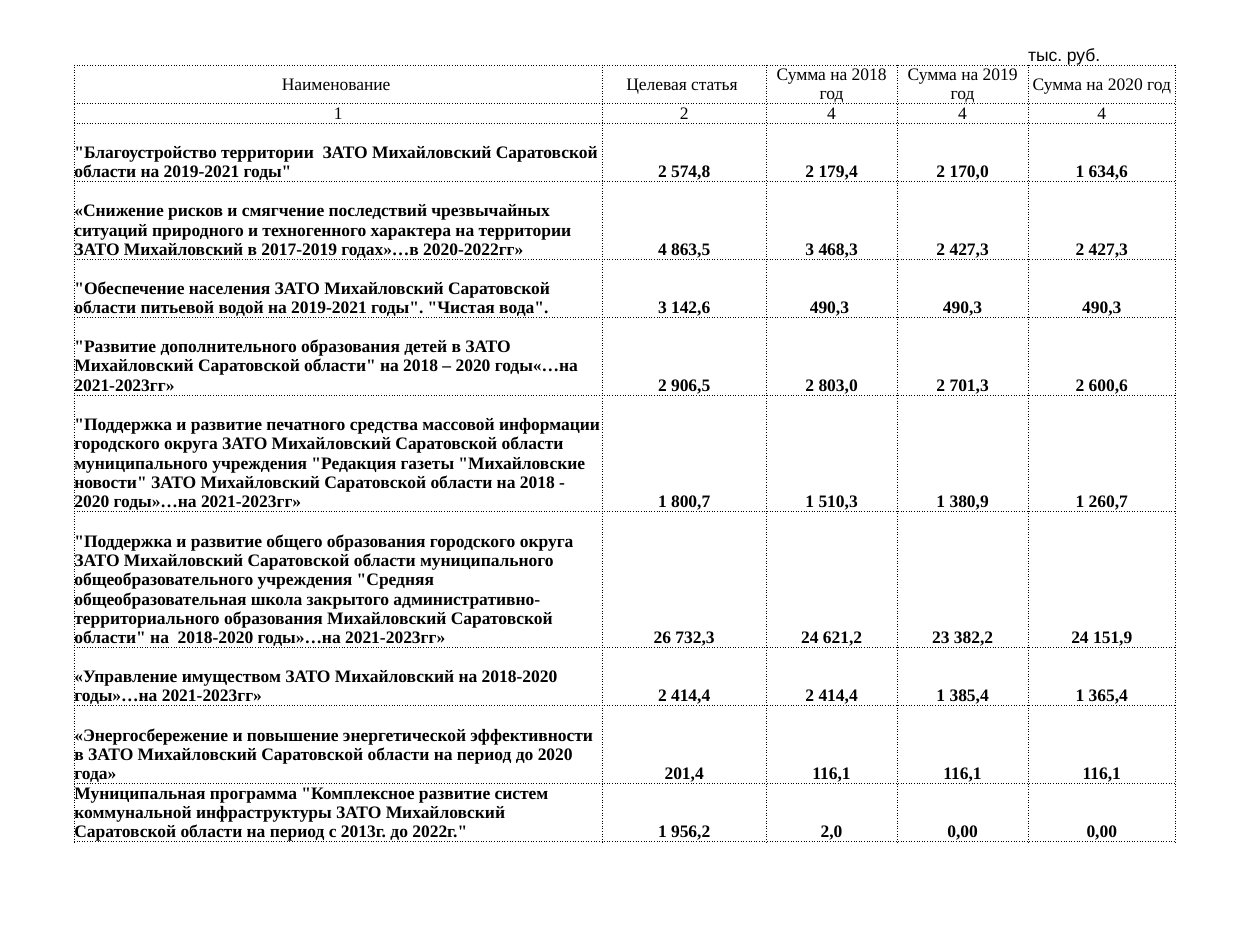
from typing import NamedTuple

from lxml.etree import SubElement
from pptx import Presentation
from pptx.dml.color import RGBColor
from pptx.enum.text import MSO_ANCHOR as Anchor, PP_ALIGN as Align
from pptx.oxml.ns import qn
from pptx.util import Inches, Pt

BLACK = RGBColor(0, 0, 0)
TEXT_SIZE = Pt(10)
LINE_HEIGHT = Pt(11.1)
BORDER = Pt(0.5)
COLUMN_WIDTHS = (4.19, 1.3, 1.04, 1.04, 1.17)
LEFT, TOP = 0.59, 0.36


class Row(NamedTuple):
    lines: int
    texts: tuple[str, ...]


class Look(NamedTuple):
    font: str = "Times New Roman"
    bold: bool = False
    align: Align = Align.CENTER
    anchor: Anchor = Anchor.BOTTOM
    sides: str = "LRTB"


UNIT = Look(font="Arial", align=Align.LEFT, sides="B")
HEADING = Look(anchor=Anchor.MIDDLE)
PROGRAMME = Look(bold=True, align=Align.LEFT)
AMOUNT = Look(bold=True)

UNIT_ROW = Row(1, ("", "", "", "", "тыс. руб."))
HEADING_ROWS = [
    Row(2, ("Наименование ", "Целевая статья ", "Сумма на 2018 год",
            "Сумма на 2019 год", "Сумма на 2020 год")),
    Row(1, ("1", "2", "4", "4", "4")),
]
PROGRAMME_ROWS = [
    Row(3, ('"Благоустройство территории  ЗАТО Михайловский Саратовской '
            'области на 2019-2021 годы"',
            "2 574,8", "2 179,4", "2 170,0", "1 634,6")),
    Row(4, ("«Снижение рисков и смягчение последствий чрезвычайных ситуаций "
            "природного и техногенного характера на территории ЗАТО "
            "Михайловский в 2017-2019 годах»…в 2020-2022гг»",
            "4 863,5", "3 468,3", "2 427,3", "2 427,3")),
    Row(3, ('"Обеспечение населения ЗАТО Михайловский Саратовской области '
            'питьевой водой на 2019-2021 годы". "Чистая вода".',
            "3 142,6", "490,3 ", "490,3", "490,3")),
    Row(4, ('"Развитие дополнительного образования детей в ЗАТО Михайловский '
            'Саратовской области" на 2018 – 2020 годы«…на 2021-2023гг»',
            "2 906,5", "2 803,0", "2 701,3", "2 600,6")),
    Row(6, ('"Поддержка и развитие печатного средства массовой информации '
            'городского округа ЗАТО Михайловский Саратовской области '
            'муниципального учреждения "Редакция газеты "Михайловские '
            'новости" ЗАТО Михайловский Саратовской области на 2018 - 2020 '
            'годы»…на 2021-2023гг»',
            "1 800,7", "1 510,3", "1 380,9", "1 260,7")),
    Row(7, ('"Поддержка и развитие общего образования городского округа ЗАТО '
            'Михайловский Саратовской области муниципального '
            'общеобразовательного учреждения "Средняя общеобразовательная '
            'школа закрытого административно-территориального образования '
            'Михайловский Саратовской области" на  2018-2020 годы»…на '
            '2021-2023гг»',
            "26 732,3", "24 621,2", "23 382,2", "24 151,9")),
    Row(3, ("«Управление имуществом ЗАТО Михайловский на 2018-2020 годы»…на "
            "2021-2023гг»",
            "2 414,4", "2 414,4", "1 385,4", "1 365,4")),
    Row(4, ("«Энергосбережение и повышение энергетической эффективности в "
            "ЗАТО Михайловский Саратовской области на период до 2020 года»",
            "201,4", "116,1", "116,1", "116,1")),
    Row(3, ('Муниципальная программа "Комплексное развитие систем '
            'коммунальной инфраструктуры ЗАТО Михайловский Саратовской '
            'области на период с 2013г. до 2022г."',
            "1 956,2", "2,0", "0,00", "0,00")),
]


def draw_borders(cell, sides: str) -> None:
    """Dot the given sides of the cell and leave the others open."""
    properties = cell._tc.get_or_add_tcPr()
    for side in "LRTB":
        line = SubElement(properties, qn(f"a:ln{side}"), w=str(BORDER))
        if side in sides:
            fill = SubElement(line, qn("a:solidFill"))
            SubElement(fill, qn("a:srgbClr"), val=str(BLACK))
            SubElement(line, qn("a:prstDash"), val="dot")
        else:
            SubElement(line, qn("a:noFill"))


def fill_cell(cell, text: str, look: Look) -> None:
    cell.margin_left = cell.margin_right = 0
    cell.margin_top = cell.margin_bottom = 0
    cell.vertical_anchor = look.anchor
    draw_borders(cell, look.sides)
    cell.fill.background()
    paragraph = cell.text_frame.paragraphs[0]
    paragraph.alignment = look.align
    font = paragraph.font
    font.name, font.size, font.bold = look.font, TEXT_SIZE, look.bold
    font.color.rgb = BLACK
    if text:
        paragraph.add_run().text = text
    else:
        # An empty cell takes its line height from the end mark.
        SubElement(paragraph._p, qn("a:endParaRPr"),
                   sz=str(int(TEXT_SIZE.pt * 100)))


def draw_budget(slide) -> None:
    plan = [(UNIT_ROW, UNIT, UNIT)]
    plan += [(row, HEADING, HEADING) for row in HEADING_ROWS]
    plan += [(row, PROGRAMME, AMOUNT) for row in PROGRAMME_ROWS]
    height = LINE_HEIGHT * sum(row.lines for row, _, _ in plan)
    budget = slide.shapes.add_table(
        len(plan), len(COLUMN_WIDTHS), Inches(LEFT), Inches(TOP),
        Inches(sum(COLUMN_WIDTHS)), height).table
    budget.first_row = budget.horz_banding = False
    for column, width in zip(budget.columns, COLUMN_WIDTHS):
        column.width = Inches(width)
    for table_row, (row, first_look, other_look) in zip(budget.rows, plan):
        table_row.height = LINE_HEIGHT * row.lines
        for index, (cell, text) in enumerate(zip(table_row.cells, row.texts)):
            fill_cell(cell, text, other_look if index else first_look)


def main() -> None:
    deck = Presentation()
    deck.slide_width, deck.slide_height = Inches(10), Inches(7.5)
    draw_budget(deck.slides.add_slide(deck.slide_layouts[6]))
    deck.save("out.pptx")


if __name__ == "__main__":
    main()
